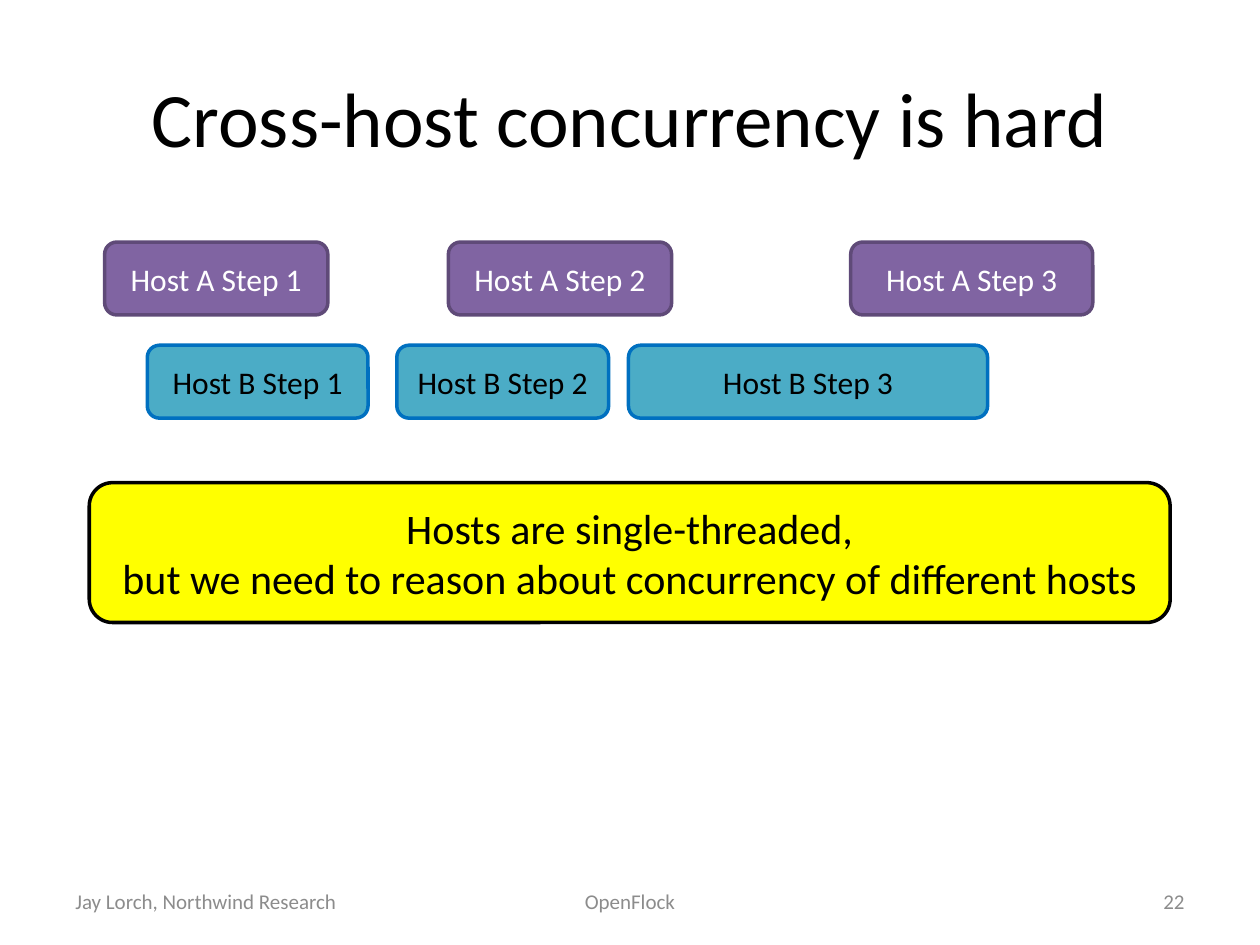
from dataclasses import dataclass

from pptx import Presentation
from pptx import util as u
from pptx.dml.color import RGBColor
from pptx.enum import shapes, text


@dataclass(frozen=True)
class Theme:
    font: str = "Calibri"
    black: str = "000000"
    white: str = "FFFFFF"
    gray: str = "8C8C8C"
    purple: str = "8064A2"
    plum: str = "5F4A78"
    teal: str = "4BACC6"
    blue: str = "0070C0"
    yellow: str = "FFFF00"
    title: int = 44
    note: int = 24
    step: int = 18
    foot: int = 12
    edge: int = 2


T = Theme()
LEFT, MID, RIGHT = text.PP_ALIGN.LEFT, text.PP_ALIGN.CENTER, text.PP_ALIGN.RIGHT


def rgb(code):
    return RGBColor.from_string(code)


def write(shape, words, size, color=T.black, align=MID):
    """Fill the shape with one paragraph per line of words."""
    frame = shape.text_frame
    frame.word_wrap = True
    frame.auto_size = text.MSO_AUTO_SIZE.NONE
    frame.vertical_anchor = text.MSO_ANCHOR.MIDDLE
    frame.text = words
    for para in frame.paragraphs:
        para.alignment = align
        font = para.runs[0].font
        font.name, font.size = T.font, u.Pt(size)
        font.color.rgb = rgb(color)


def card(parent, box, words, size, fill, line, color=T.black):
    """Add a rounded, outlined box with centred text."""
    shape = parent.add_shape(shapes.MSO_SHAPE.ROUNDED_RECTANGLE, *map(u.Cm, box))
    shape.shadow.inherit = False
    shape.fill.solid()
    shape.fill.fore_color.rgb = rgb(fill)
    shape.line.color.rgb = rgb(line)
    shape.line.width = u.Pt(T.edge)
    write(shape, words, size, color)


def head(slide, box, words):
    title = slide.shapes.title
    title.left, title.top, title.width, title.height = map(u.Cm, box)
    write(title, words, T.title)


def lane(slide, box, host, steps, **look):
    """Draw one host's steps, each given as offset and width in the box."""
    left, top, _, high = box
    group = slide.shapes.add_group_shape()
    for num, (shift, wide) in enumerate(steps, 1):
        card(group.shapes, (left + shift, top, wide, high),
             f"Host {host} Step {num}", T.step, **look)


def foot(slide, box, parts):
    """Place the footer texts: left, centre and right."""
    left, top, wide, high = box
    side, main = 5.92, 8.05
    slots = ((0, side, LEFT), ((wide - main) / 2, main, MID),
             (wide - side, side, RIGHT))
    for words, (shift, span, align) in zip(parts, slots):
        area = map(u.Cm, (left + shift, top, span, high))
        write(slide.shapes.add_textbox(*area), words, T.foot, T.gray, align)


def main():
    deck = Presentation()
    deck.slide_width, deck.slide_height = u.Cm(25.4), u.Cm(19.05)
    slide = deck.slides.add_slide(deck.slide_layouts[5])
    head(slide, (1.27, 0.76, 22.86, 3.18), "Cross-host concurrency is hard")
    foot(slide, (1.27, 17.65, 22.86, 1.02),
         ("Jay Lorch, Northwind Research", "OpenFlock", "22"))
    lane(slide, (2.11, 4.88, 19.92, 1.47), "A",
         ((0, 4.5), (6.93, 4.5), (15.04, 4.88)),
         fill=T.purple, line=T.plum, color=T.white)
    lane(slide, (2.97, 6.96, 16.94, 1.47), "B",
         ((0, 4.45), (5.03, 4.27), (9.7, 7.24)),
         fill=T.teal, line=T.blue)
    card(slide.shapes, (1.8, 9.73, 21.79, 2.82),
         "Hosts are single-threaded,\n"
         "but we need to reason about concurrency of different hosts",
         T.note, T.yellow, T.black)
    deck.save("out.pptx")


if __name__ == "__main__":
    main()
